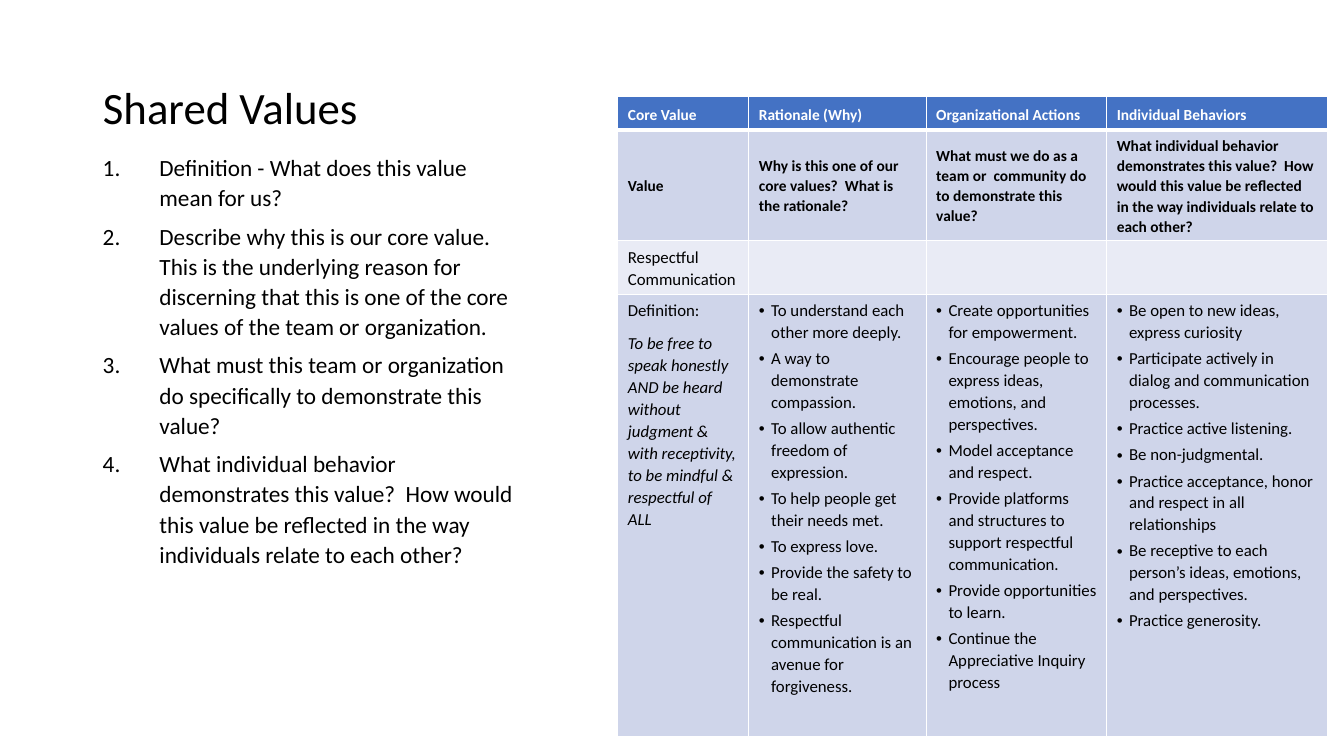
from lxml import etree
from pptx import Presentation
from pptx.dml.color import RGBColor
from pptx.enum.text import MSO_ANCHOR, MSO_AUTO_SIZE, PP_ALIGN
from pptx.oxml.ns import qn
from pptx.util import Cm, Pt

TOP, MID, LOW = MSO_ANCHOR.TOP, MSO_ANCHOR.MIDDLE, MSO_ANCHOR.BOTTOM
LEFT = PP_ALIGN.LEFT
FIXED = MSO_AUTO_SIZE.NONE
FONT = "Calibri"
BLACK, WHITE, BLUE = "000000", "FFFFFF", "4472C4"
DARK, PALE = "CFD5EA", "E9EBF5"

TITLE = "Shared Values"
STEPS = [
    "Definition - What does this value mean for us?",
    "Describe why this is our core value. This is the underlying reason for discerning that this is one of the core values of the team or organization.",
    "What must this team or organization do specifically to demonstrate this value?",
    "What individual behavior demonstrates this value?  How would this value be reflected in the way individuals relate to each other?",
]
HEADS = ["Core Value", "Rationale (Why)", "Organizational Actions", "Individual Behaviors"]
ASKS = [
    "Value",
    "Why is this one of our core values?  What is the rationale?",
    "What must we do as a team or  community do to demonstrate this value?",
    "What individual behavior demonstrates this value?  How would this value be reflected in the way individuals relate to each other?",
]
NAMES = ["Respectful Communication", "", "", ""]
LABEL = "Definition:"
MEANING = "To be free to speak honestly AND be heard without judgment & with receptivity, to be mindful & respectful of ALL"
POINTS = [
    [
        "To understand each other more deeply.",
        "A way to demonstrate compassion.",
        "To allow authentic freedom of expression.",
        "To help people get their needs met.",
        "To express love.",
        "Provide the safety to be real.",
        "Respectful communication is an avenue for forgiveness.",
    ],
    [
        "Create opportunities for empowerment.",
        "Encourage people to express ideas, emotions, and perspectives.",
        "Model acceptance and respect.",
        "Provide platforms and structures to support respectful communication.",
        "Provide opportunities to learn.",
        "Continue the Appreciative Inquiry process",
    ],
    [
        "Be open to new ideas, express curiosity",
        "Participate actively in dialog and communication processes.",
        "Practice active listening.",
        "Be non-judgmental.",
        "Practice acceptance, honor and respect in all relationships",
        "Be receptive to each person’s ideas, emotions, and perspectives.",
        "Practice generosity.",
    ],
]
COLS = [3.3, 4.47, 4.55, 5.56]
ROWS = [0.84, 2.79, 1.35, 11.13]
FILLS = [BLUE, DARK, PALE, DARK]
ANCHORS = [LOW, MID, MID, TOP]
PLAIN = [
    (HEADS, dict(size=11, bold=True, color=WHITE)),
    (ASKS, dict(size=11, bold=True)),
    (NAMES, dict(size=12)),
]


def rgb(code):
    return RGBColor.from_string(code)


def put(frame, text, size=12, color=BLACK, bold=False, italic=False,
        line=1.07, after=8, hang=0, mark=None):
    para = frame.add_paragraph() if frame.text else frame.paragraphs[0]
    if mark:
        props = para._p.get_or_add_pPr()
        props.set("marL", str(Cm(hang)))
        props.set("indent", str(-Cm(hang)))
        if mark == "1.":
            etree.SubElement(props, qn("a:buFont"), typeface="+mj-lt")
            etree.SubElement(props, qn("a:buAutoNum"), type="arabicPeriod")
        else:
            etree.SubElement(props, qn("a:buFont"), typeface="Arial")
            etree.SubElement(props, qn("a:buChar"), char=mark)
    para.alignment = LEFT
    para.line_spacing = line
    para.space_before = Pt(0)
    para.space_after = Pt(after)
    run = para.add_run()
    run.text = text
    font = run.font
    font.name, font.size, font.bold, font.italic = FONT, Pt(size), bold, italic
    font.color.rgb = rgb(color)


def edge(cell, side, width):
    props = cell._tc.get_or_add_tcPr()
    line = etree.SubElement(props, qn("a:" + side), w=str(Pt(width)))
    paint = etree.SubElement(line, qn("a:solidFill"))
    etree.SubElement(paint, qn("a:srgbClr"), val=WHITE)


def place(shape, left, top, width, height):
    shape.left, shape.top = Cm(left), Cm(top)
    shape.width, shape.height = Cm(width), Cm(height)


def add_title(slide):
    title = slide.shapes.title
    place(title, 2.34, 1.27, 10.92, 2.24)
    frame = title.text_frame
    frame.auto_size = FIXED
    frame.vertical_anchor = LOW
    put(frame, TITLE, size=32, line=0.9, after=0)


def add_steps(slide):
    box = slide.shapes.add_textbox(Cm(2.34), Cm(3.68), Cm(10.92), Cm(12.8))
    frame = box.text_frame
    frame.word_wrap = True
    for step in STEPS:
        put(frame, step, size=16.6, line=1.08, after=6, hang=1.43, mark="1.")


def add_grid(slide):
    grid = slide.shapes.add_table(
        len(ROWS), len(COLS), Cm(15.57), Cm(2.44), Cm(sum(COLS)), Cm(sum(ROWS))).table
    for col, width in zip(grid.columns, COLS):
        col.width = Cm(width)
    for r, high in enumerate(ROWS):
        grid.rows[r].height = Cm(high)
        for c in range(len(COLS)):
            cell = grid.cell(r, c)
            for side in ("lnL", "lnR", "lnT", "lnB"):
                thick = (r, side) in ((0, "lnB"), (1, "lnT"))
                edge(cell, side, 3 if thick else 1)
            cell.fill.solid()
            cell.fill.fore_color.rgb = rgb(FILLS[r])
            cell.vertical_anchor = ANCHORS[r]
    for r, (texts, style) in enumerate(PLAIN):
        for c, text in enumerate(texts):
            if text:
                put(grid.cell(r, c).text_frame, text, **style)
    last = len(ROWS) - 1
    frame = grid.cell(last, 0).text_frame
    put(frame, LABEL)
    put(frame, MEANING, italic=True)
    for c, points in enumerate(POINTS, 1):
        for point in points:
            put(grid.cell(last, c).text_frame, point, after=3, hang=0.31, mark="•")


def main():
    deck = Presentation()
    deck.slide_width, deck.slide_height = Cm(33.87), Cm(19.05)
    slide = deck.slides.add_slide(deck.slide_layouts[5])
    add_title(slide)
    add_steps(slide)
    add_grid(slide)
    deck.save("out.pptx")


if __name__ == "__main__":
    main()
